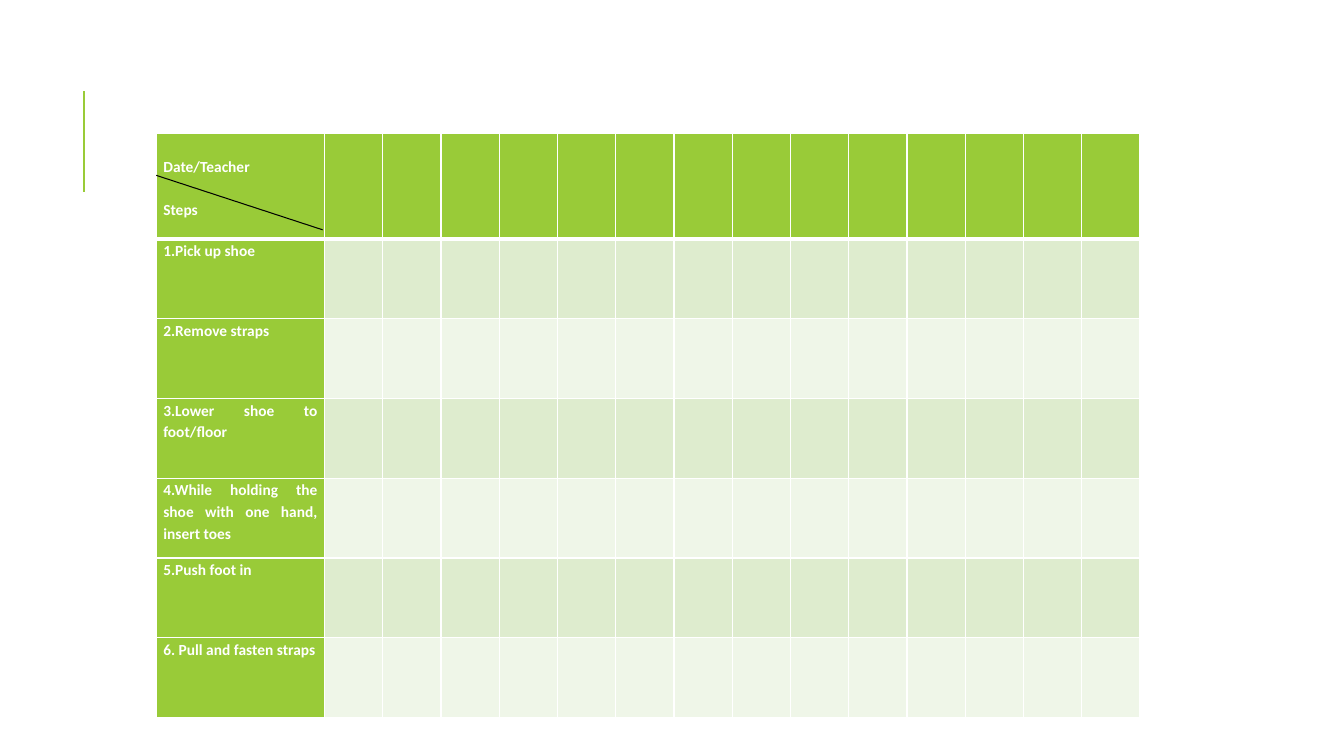
from lxml import etree
from pptx import Presentation
from pptx.dml.color import RGBColor
from pptx.enum import shapes, text
from pptx.oxml import ns
from pptx.util import Inches, Pt

GREEN = "99CB38"
WHITE = "FFFFFF"
BANDS = ["DEECCE", "EFF6E8"]
LINE_PITCH = Pt(15.5)
DATE_COLUMNS = 14
TABLE_LEFT, TABLE_TOP, TABLE_WIDTH, TABLE_HEIGHT = 1.55, 1.32, 9.76, 5.8
STEP_WIDTH, HEADER_HEIGHT = 1.67, 1.05
HEADER = ["Date/Teacher", "Steps"]
STEPS = [
    "1.Pick up shoe",
    "2.Remove straps",
    "3.Lower shoe to foot/floor",
    "4.While holding the shoe with one hand, insert toes",
    "5.Push foot in",
    "6. Pull and fasten straps",
]


def color(value):
    return RGBColor.from_string(value)


def add_line(slide, start, end, line_color, width):
    connector = slide.shapes.add_connector(
        shapes.MSO_CONNECTOR.STRAIGHT, *[Inches(value) for value in start + end]
    )
    connector.line.color.rgb = color(line_color)
    connector.line.width = Pt(width)
    etree.SubElement(connector._element.spPr, ns.qn("a:effectLst"))


def set_borders(cell, widths):
    properties = cell._tc.get_or_add_tcPr()
    for index, (side, width) in enumerate(widths.items()):
        border = etree.Element(ns.qn(f"a:ln{side}"), w=str(Pt(width)))
        fill = etree.SubElement(border, ns.qn("a:solidFill"))
        etree.SubElement(fill, ns.qn("a:srgbClr"), val=WHITE)
        properties.insert(index, border)


def style_cell(cell, row, column):
    cell.fill.solid()
    is_label = row == 0 or column == 0
    cell.fill.fore_color.rgb = color(GREEN if is_label else BANDS[(row - 1) % 2])
    top = 3 if row == 1 else 1
    bottom = 3 if row == 0 else 1
    set_borders(cell, {"L": 1, "R": 1, "T": top, "B": bottom})


def write_label(cell, lines):
    cell.margin_left = cell.margin_right = Inches(0.07)
    cell.margin_top = cell.margin_bottom = 0
    frame = cell.text_frame
    for index, line in enumerate(lines):
        paragraph = frame.add_paragraph() if index else frame.paragraphs[0]
        paragraph.alignment = text.PP_ALIGN.JUSTIFY
        paragraph.line_spacing = 1.15
        if index:
            paragraph.space_before = LINE_PITCH
        run = paragraph.add_run()
        run.text = line
        run.font.name = "Calibri"
        run.font.size = Pt(11)
        run.font.bold = True
        run.font.color.rgb = color(WHITE)


def add_steps_table(slide):
    labels = [HEADER] + [[step] for step in STEPS]
    table = slide.shapes.add_table(
        len(labels), DATE_COLUMNS + 1,
        Inches(TABLE_LEFT), Inches(TABLE_TOP), Inches(TABLE_WIDTH), Inches(TABLE_HEIGHT),
    ).table
    date_width = (TABLE_WIDTH - STEP_WIDTH) / DATE_COLUMNS
    step_height = (TABLE_HEIGHT - HEADER_HEIGHT) / len(STEPS)
    for index, column in enumerate(table.columns):
        column.width = Inches(date_width if index else STEP_WIDTH)
    for row_index, row in enumerate(table.rows):
        row.height = Inches(step_height if row_index else HEADER_HEIGHT)
        for column_index, cell in enumerate(row.cells):
            style_cell(cell, row_index, column_index)
        write_label(row.cells[0], labels[row_index])
    table.cell(0, 0).margin_top = LINE_PITCH


def main():
    presentation = Presentation()
    presentation.slide_width = Inches(13.33)
    presentation.slide_height = Inches(7.5)
    slide = presentation.slides.add_slide(presentation.slide_layouts[6])
    add_line(slide, (0.83, 1.9), (0.83, 0.9), GREEN, 1.5)
    add_steps_table(slide)
    add_line(slide, (1.55, 1.74), (3.2, 2.28), "000000", 0.75)
    presentation.save("out.pptx")


if __name__ == "__main__":
    main()
